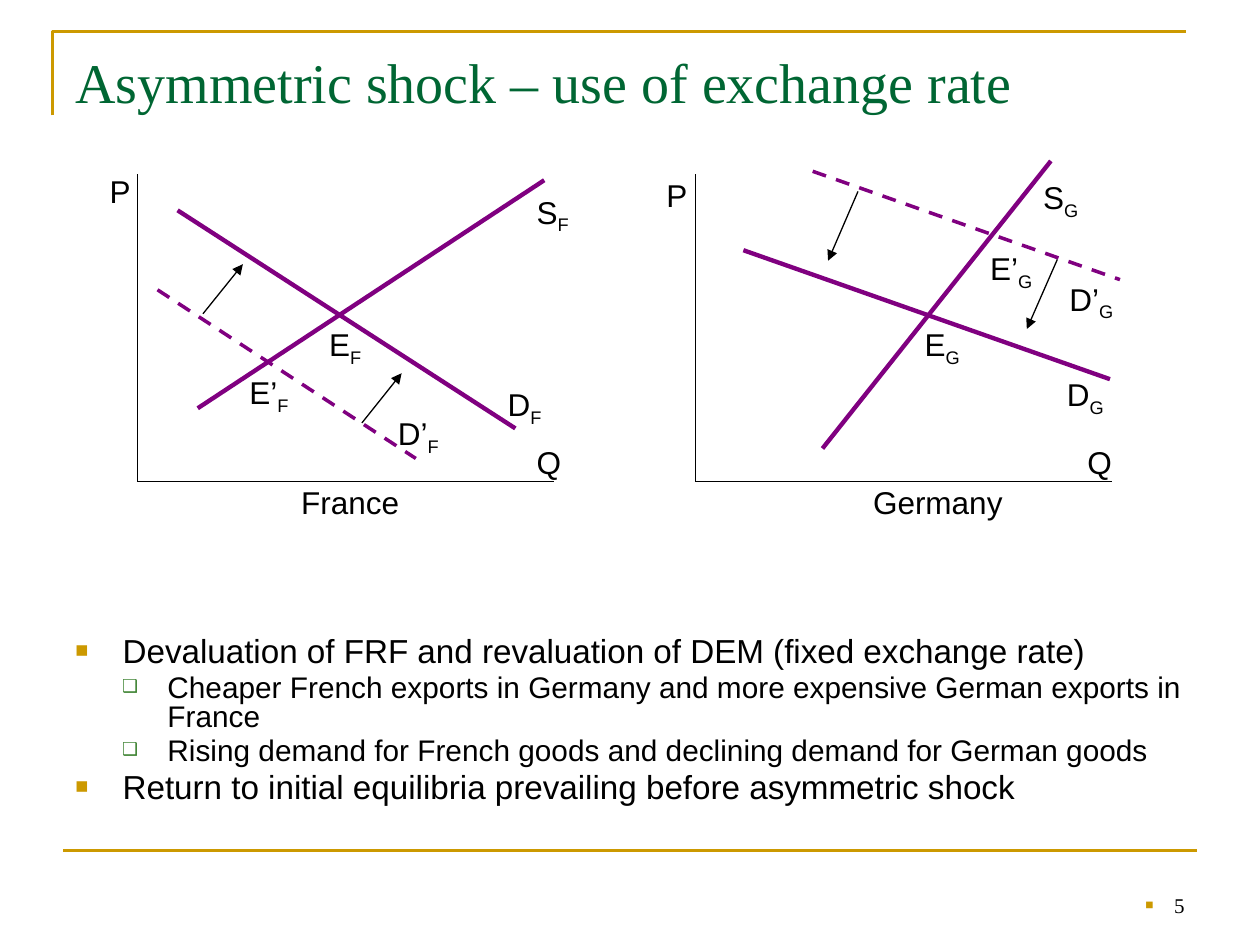
from pptx import Presentation
from pptx.dml.color import RGBColor
from pptx.enum.dml import MSO_LINE
from pptx.enum.shapes import MSO_CONNECTOR
from pptx.enum.text import MSO_ANCHOR, PP_ALIGN
from pptx.oxml.ns import qn
from pptx.util import Pt
from lxml.etree import SubElement

BLACK, PURPLE, GOLD, GREEN = "000000", "800080", "CC9900", "006633"

# Points on the slide: axis origin, curves and arrows as (x1, y1, x2, y2), labels as (x, y, base, subscript)
FRANCE = {
    "origin": (78.5, 275),
    "curves": [(113, 233.3, 311, 103), (101.5, 120.2, 294.5, 244.8)],
    "shifted_demand": (90, 165.6, 237.6, 262),
    "arrows": [(116, 179.3, 138.8, 151), (206.8, 241.7, 229.5, 213.3)],
    "labels": [(299.5, 106.5, "S", "F"), (283, 216.7, "D", "F"), (181, 182.2, "E", "F"),
               (135.4, 209.5, "E’", "F"), (220.3, 233.3, "D’", "F"),
               (165, 272.2, "France", ""), (55.5, 95, "P", ""), (299.5, 249.8, "Q", "")],
}
GERMANY = {
    "origin": (397.3, 275),
    "curves": [(470, 256.3, 600.5, 92), (424.8, 143, 634.3, 216.7)],
    "shifted_demand": (464.4, 97.9, 640, 159.8),
    "arrows": [(490.3, 109.4, 473.2, 149), (604.2, 148.3, 586.8, 188)],
    "labels": [(589, 98, "S", "G"), (602.6, 211, "D", "G"), (521.3, 182.2, "E", "G"),
               (558.7, 139, "E’", "G"), (604, 156.2, "D’", "G"),
               (491.8, 272.2, "Germany", ""), (373.7, 97.2, "P", ""), (614.2, 249.8, "Q", "")],
}
POINTS = [
    (0, "Devaluation of FRF and revaluation of DEM (fixed exchange rate)"),
    (1, "Cheaper French exports in Germany and more expensive German exports in France"),
    (1, "Rising demand for French goods and declining demand for German goods"),
    (0, "Return to initial equilibria prevailing before asymmetric shock"),
]


def color(hex_code):
    return RGBColor.from_string(hex_code)


def add_line(slide, ends, hex_code, weight, dashed=False, arrow=False):
    line = slide.shapes.add_connector(MSO_CONNECTOR.STRAIGHT, *map(Pt, ends))
    line.line.color.rgb = color(hex_code)
    line.line.width = Pt(weight)
    if dashed:
        line.line.dash_style = MSO_LINE.DASH
    if arrow:
        SubElement(line.line._get_or_add_ln(), qn("a:tailEnd"), type="triangle")
    SubElement(line._element.spPr, qn("a:effectLst"))


def add_text_frame(slide, left, top, width, height, anchor=MSO_ANCHOR.TOP):
    box = slide.shapes.add_textbox(Pt(left), Pt(top), Pt(width), Pt(height))
    frame = box.text_frame
    frame.word_wrap = True
    frame.vertical_anchor = anchor
    return frame


def set_font(paragraph, name, size, hex_code=BLACK):
    paragraph.font.name = name
    paragraph.font.size = Pt(size)
    paragraph.font.color.rgb = color(hex_code)


def set_bullet(paragraph, char, hex_code, percent, margin, hanging):
    props = paragraph._p.get_or_add_pPr()
    props.set("marL", str(Pt(margin)))
    props.set("indent", str(-Pt(hanging)))
    bullet = [("buClr", {}), ("buSzPct", {"val": str(percent * 1000)}),
              ("buFont", {"typeface": "Arial"}), ("buChar", {"char": char})]
    # Bullet settings come after spacing and before the default run properties.
    following = props.find(qn("a:defRPr"))
    for tag, attributes in bullet:
        item = SubElement(props, qn(f"a:{tag}"), attributes)
        if tag == "buClr":
            SubElement(item, qn("a:srgbClr"), val=hex_code)
        if following is not None:
            following.addprevious(item)


def add_label(slide, left, top, base, subscript):
    width = 96 if len(base) > 2 else 46
    paragraph = add_text_frame(slide, left, top, width, 29).paragraphs[0]
    set_font(paragraph, "Arial", 18)
    paragraph.add_run().text = base
    if subscript:
        lowered = paragraph.add_run()
        lowered.text = subscript
        lowered.font._element.set("baseline", "-25000")


def add_market(slide, market):
    """Draw one supply and demand diagram."""
    x, y = market["origin"]
    add_line(slide, (x, y - 175.5, x, y), BLACK, 0.75)
    add_line(slide, (x, y, x + 238, y), BLACK, 0.75)
    for curve in market["curves"]:
        add_line(slide, curve, PURPLE, 2.5)
    add_line(slide, market["shifted_demand"], PURPLE, 2, dashed=True)
    for arrow in market["arrows"]:
        add_line(slide, arrow, BLACK, 0.75, arrow=True)
    for label in market["labels"]:
        add_label(slide, *label)


def add_frame_lines(slide):
    builder = slide.shapes.build_freeform(Pt(30), Pt(66))
    builder.add_line_segments([(Pt(30), Pt(18)), (Pt(678), Pt(18))], close=False)
    corner = builder.convert_to_shape()
    corner.fill.background()
    corner.line.color.rgb = color(GOLD)
    corner.line.width = Pt(1.5)
    corner.shadow.inherit = False
    add_line(slide, (36, 486, 684, 486), GOLD, 1.5)


def add_title(slide):
    title = add_text_frame(slide, 36, 21.6, 648, 50, MSO_ANCHOR.MIDDLE).paragraphs[0]
    title.text = "Asymmetric shock – use of exchange rate"
    set_font(title, "Times New Roman", 32, GREEN)


def add_points(slide):
    frame = add_text_frame(slide, 36, 361, 648, 136)
    for index, (level, wording) in enumerate(POINTS):
        point = frame.paragraphs[0] if index == 0 else frame.add_paragraph()
        point.text = wording
        point.level = level
        point.line_spacing = 0.8
        point.space_before = Pt(3.8 if level == 0 else 3.4)
        set_font(point, "Arial", 19 if level == 0 else 17)
        if level == 0:
            set_bullet(point, "■", GOLD, 65, 27, 27)
        else:
            set_bullet(point, "❑", "3B812F", 60, 52.6, 25.9)


def add_page_number(slide):
    number = add_text_frame(slide, 516, 492, 168, 36, MSO_ANCHOR.BOTTOM).paragraphs[0]
    number.text = "5"
    number.alignment = PP_ALIGN.RIGHT
    set_font(number, "Times New Roman", 12)
    set_bullet(number, "■", GOLD, 65, 16.5, 16.5)


def main():
    deck = Presentation()
    deck.slide_width, deck.slide_height = Pt(720), Pt(540)
    slide = deck.slides.add_slide(deck.slide_layouts[6])
    add_frame_lines(slide)
    add_page_number(slide)
    add_title(slide)
    for market in (FRANCE, GERMANY):
        add_market(slide, market)
    add_points(slide)
    deck.save("out.pptx")


if __name__ == "__main__":
    main()
